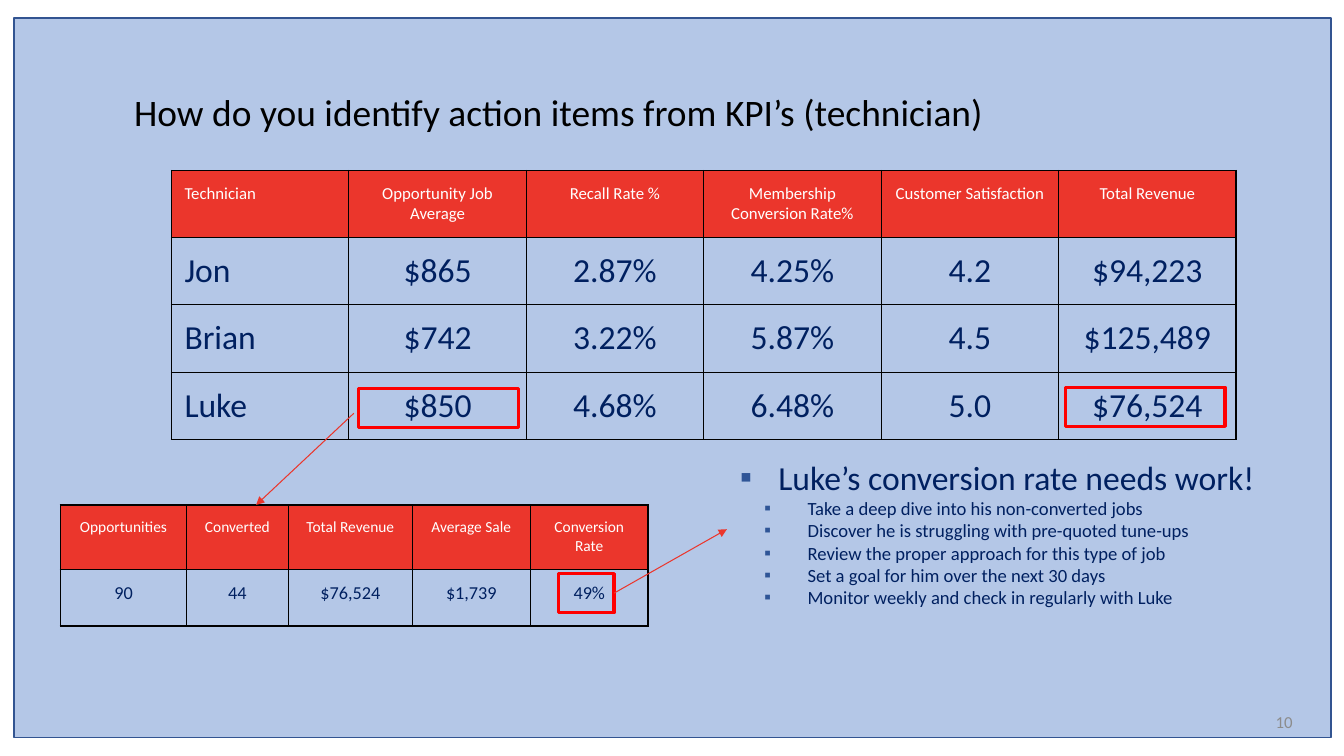
from dataclasses import dataclass

from lxml import etree
from pptx import Presentation
from pptx.dml.color import RGBColor
from pptx.enum import shapes, text
from pptx.oxml import ns
from pptx.util import Inches, Pt


@dataclass(frozen=True)
class Theme:
    font: str = "Calibri"
    panel: str = "B4C7E7"
    panel_edge: str = "325491"
    header: str = "EB362C"
    highlight: str = "FF0000"
    navy: str = "002060"
    bullet: str = "2F5597"
    white: str = "FFFFFF"
    black: str = "000000"
    grey: str = "8C8C8C"
    title_size: float = 26.7
    large: float = 24
    detail: float = 13.3
    figure: float = 13
    label: float = 12
    small_label: float = 11
    inset: float = 0.13


THEME = Theme()


@dataclass(frozen=True)
class Box:
    left: float
    top: float
    width: float
    height: float

    def inches(self):
        return [Inches(v) for v in (self.left, self.top, self.width, self.height)]

    def inner(self, left, top, width, height):
        return Box(self.left + left, self.top + top, width, height)


def add_xml(parent, tag, **attributes):
    return etree.SubElement(parent, ns.qn(tag), attributes)


def set_insets(holder):
    holder.margin_left = holder.margin_right = Inches(THEME.inset)
    holder.margin_top = holder.margin_bottom = Inches(THEME.inset)


def write(paragraph, wording, size, color, align=text.PP_ALIGN.LEFT):
    paragraph.alignment = align
    run = paragraph.add_run()
    run.text = wording
    run.font.name = THEME.font
    run.font.size = Pt(size)
    run.font.color.rgb = RGBColor.from_string(color)


def prepare_frame(holder, box):
    holder.left, holder.top, holder.width, holder.height = box.inches()
    frame = holder.text_frame
    frame.word_wrap = True
    frame.auto_size = text.MSO_AUTO_SIZE.NONE
    frame.vertical_anchor = text.MSO_ANCHOR.TOP
    set_insets(frame)
    return frame


def add_rectangle(slide, box, line, weight, fill=None):
    rectangle = slide.shapes.add_shape(shapes.MSO_SHAPE.RECTANGLE, *box.inches())
    rectangle.shadow.inherit = False
    rectangle.line.color.rgb = RGBColor.from_string(line)
    rectangle.line.width = Pt(weight)
    if fill:
        rectangle.fill.solid()
        rectangle.fill.fore_color.rgb = RGBColor.from_string(fill)
    else:
        rectangle.fill.background()
    return rectangle


def add_backdrop(slide, box):
    backdrop = add_rectangle(slide, box, THEME.panel_edge, 1, THEME.panel)
    slide.shapes._spTree.insert(2, backdrop._element)


def add_highlight(slide, box):
    return add_rectangle(slide, box, THEME.highlight, 2.25)


def add_arrow(slide, start, end):
    points = [Inches(v) for v in (*start, *end)]
    arrow = slide.shapes.add_connector(shapes.MSO_CONNECTOR.STRAIGHT, *points)
    arrow.line.color.rgb = RGBColor.from_string(THEME.header)
    arrow.line.width = Pt(0.75)
    add_xml(arrow.line._get_or_add_ln(), "a:tailEnd", type="triangle")
    add_xml(arrow._element.spPr, "a:effectLst")
    return arrow


def set_borders(cell, weights):
    properties = cell._tc.get_or_add_tcPr()
    for position, (side, weight) in enumerate(zip("LRTB", weights)):
        line = etree.Element(ns.qn(f"a:ln{side}"), w=str(Pt(weight)))
        add_xml(add_xml(line, "a:solidFill"), "a:srgbClr", val=THEME.black)
        properties.insert(position, line)


def add_kpi_table(slide, box, rows, widths, heights, sizes, edge, first_align):
    table = slide.shapes.add_table(len(rows), len(widths), *box.inches()).table
    for column, width in zip(table.columns, widths):
        column.width = Inches(width)
    for row, height in zip(table.rows, heights):
        row.height = Inches(height)
    last_row, last_column = len(rows) - 1, len(widths) - 1
    for r, values in enumerate(rows):
        size, color = (sizes[0], THEME.white) if r == 0 else (sizes[1], THEME.navy)
        for c, value in enumerate(values):
            cell = table.cell(r, c)
            set_insets(cell)
            align = text.PP_ALIGN.CENTER if c else first_align
            write(cell.text_frame.paragraphs[0], value, size, color, align)
            if r == 0:
                cell.fill.solid()
                cell.fill.fore_color.rgb = RGBColor.from_string(THEME.header)
            else:
                cell.fill.background()
            outer = (c == 0, c == last_column, r == 0, r == last_row)
            set_borders(cell, [edge if on_edge else 1 for on_edge in outer])


def add_technicians(slide, box):
    rows = [
        ("Technician", "Opportunity Job Average", "Recall Rate %",
         "Membership Conversion Rate%", "Customer Satisfaction", "Total Revenue"),
        ("Jon", "$865", "2.87%", "4.25%", "4.2", "$94,223"),
        ("Brian", "$742", "3.22%", "5.87%", "4.5", "$125,489"),
        ("Luke", "$850", "4.68%", "6.48%", "5.0", "$76,524"),
    ]
    columns = len(rows[0])
    add_kpi_table(slide, box, rows, [box.width / columns] * columns,
                  [box.height / len(rows)] * len(rows),
                  (THEME.label, THEME.large), 1, text.PP_ALIGN.LEFT)
    for left, top in ((1.86, 2.16), (8.87, 2.15)):
        add_highlight(slide, box.inner(left, top, 1.58, 0.39))


def add_conversion(slide, box):
    rows = [
        ("Opportunities", "Converted", "Total Revenue", "Average Sale", "Conversion Rate"),
        ("90", "44", "$76,524", "$1,739", "49%"),
    ]
    add_kpi_table(slide, box, rows, (1.25, 1.01, 1.23, 1.17, 1.17), (0.64, 0.56),
                  (THEME.small_label, THEME.figure), 1.5, text.PP_ALIGN.CENTER)
    return add_highlight(slide, box.inner(4.94, 0.68, 0.55, 0.39))


def add_title(slide, box):
    paragraph = prepare_frame(slide.shapes.title, box).paragraphs[0]
    paragraph.line_spacing = 0.9
    write(paragraph, "How do you identify action items from KPI’s (technician)",
          THEME.title_size, THEME.black)


def add_actions(slide, box):
    actions = [
        "Luke’s conversion rate needs work!",
        "Take a deep dive into his non-converted jobs",
        "Discover he is struggling with pre-quoted tune-ups",
        "Review the proper approach for this type of job",
        "Set a goal for him over the next 30 days",
        "Monitor weekly and check in regularly with Luke",
    ]
    frame = prepare_frame(slide.placeholders[1], box)
    for number, action in enumerate(actions):
        paragraph = frame.add_paragraph() if number else frame.paragraphs[0]
        paragraph.level = 1 if number else 0
        paragraph.space_before = paragraph.space_after = Pt(0)
        margin, hanging = (0.67, 0.43) if number else (0.38, 0.38)
        write(paragraph, action, THEME.detail if number else THEME.large, THEME.navy)
        properties = paragraph._p.get_or_add_pPr()
        properties.set("marL", str(Inches(margin)))
        properties.set("indent", str(-Inches(hanging)))
        add_xml(add_xml(properties, "a:buClr"), "a:srgbClr", val=THEME.bullet)
        add_xml(properties, "a:buFont", typeface=THEME.font)
        add_xml(properties, "a:buChar", char="▪")


def add_page_number(slide, box):
    frame = prepare_frame(slide.shapes.add_textbox(*box.inches()), box)
    write(frame.paragraphs[0], "10", THEME.label, THEME.grey, text.PP_ALIGN.RIGHT)


def main():
    deck = Presentation()
    deck.slide_width, deck.slide_height = Inches(13.33), Inches(7.5)
    slide = deck.slides.add_slide(deck.slide_layouts[1])
    add_backdrop(slide, Box(0.14, 0.18, 13.06, 7.14))
    add_title(slide, Box(1.2, 0.8, 9.71, 0.89))
    add_technicians(slide, Box(1.7, 1.69, 10.56, 2.67))
    conversion_highlight = add_conversion(slide, Box(0.6, 5.01, 5.83, 1.2))
    add_actions(slide, Box(7.21, 4.4, 5.77, 1.9))
    add_arrow(slide, (3.51, 4.1), (2.54, 5.01))
    action_arrow = add_arrow(slide, (6.09, 5.88), (7.21, 5.25))
    action_arrow.begin_connect(conversion_highlight, 3)
    add_page_number(slide, Box(12.15, 6.93, 0.8, 0.39))
    deck.save("out.pptx")


if __name__ == "__main__":
    main()
